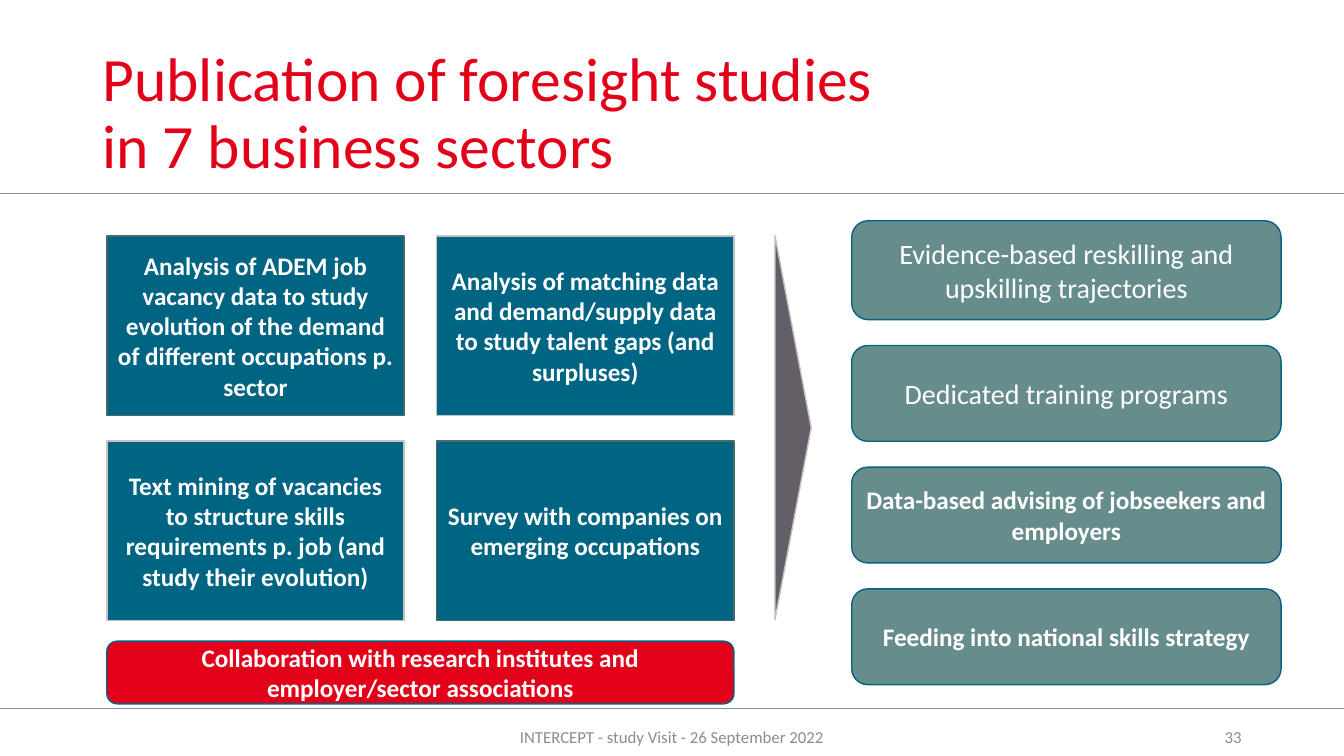
from dataclasses import dataclass

from lxml import etree
from pptx import Presentation
from pptx import util as u
from pptx.dml.color import RGBColor
from pptx.enum import shapes, text
from pptx.oxml import ns

RED = RGBColor(0xE3, 0x00, 0x19)
BLUE = RGBColor(0x00, 0x64, 0x83)
TEAL = RGBColor(0x66, 0x8D, 0x8C)
DARK_TEAL = RGBColor(0x4B, 0x68, 0x68)
PLUM = RGBColor(0x64, 0x5E, 0x66)
PALE = RGBColor(0xC5, 0xC1, 0xC6)
RULE_GREY = RGBColor(0x87, 0x91, 0x9A)
FOOTER_GREY = RGBColor(0x8C, 0x8C, 0x8C)
WHITE = RGBColor(0xFF, 0xFF, 0xFF)

WIDTH, HEIGHT = 960, 540
RECTANGLE = shapes.MSO_SHAPE.RECTANGLE
ROUNDED = shapes.MSO_SHAPE.ROUNDED_RECTANGLE
LEFT, CENTER, RIGHT = text.PP_ALIGN.LEFT, text.PP_ALIGN.CENTER, text.PP_ALIGN.RIGHT
MIDDLE, BOTTOM = text.MSO_ANCHOR.MIDDLE, text.MSO_ANCHOR.BOTTOM


@dataclass(frozen=True)
class Area:
    left: float
    top: float
    width: float
    height: float

    def lengths(self) -> list[u.Length]:
        return [u.Pt(value) for value in (self.left, self.top, self.width, self.height)]


@dataclass(frozen=True)
class Label:
    wording: str
    size: float = 18
    bold: bool = True
    color: RGBColor = WHITE
    align: text.PP_ALIGN = CENTER
    anchor: text.MSO_ANCHOR = MIDDLE
    spacing: float = 1.0


@dataclass(frozen=True)
class Method:
    column: int
    row: int
    outline: RGBColor
    wording: str


def write(shape, label: Label) -> None:
    frame = shape.text_frame
    frame.word_wrap = True
    frame.vertical_anchor = label.anchor
    paragraph = frame.paragraphs[0]
    paragraph.text = label.wording
    paragraph.alignment = label.align
    paragraph.line_spacing = label.spacing
    font_values = {"name": "Calibri", "size": u.Pt(label.size), "bold": label.bold}
    for run in paragraph.runs:
        for name, value in font_values.items():
            setattr(run.font, name, value)
        run.font.color.rgb = label.color


def add_text(slide, area: Area, label: Label) -> None:
    write(slide.shapes.add_textbox(*area.lengths()), label)


def add_block(slide, kind, area: Area, fill: RGBColor, outline: RGBColor,
              label: Label | None = None, rotation: float = 0) -> None:
    shape = slide.shapes.add_shape(kind, *area.lengths())
    shape.shadow.inherit = False
    shape.rotation = rotation
    shape.fill.solid()
    shape.fill.fore_color.rgb = fill
    shape.line.color.rgb = outline
    shape.line.width = u.Pt(1)
    if label:
        write(shape, label)


def add_rule(slide, top: float) -> None:
    rule = slide.shapes.add_connector(
        shapes.MSO_CONNECTOR.STRAIGHT, 0, u.Pt(top), u.Pt(WIDTH), u.Pt(top))
    rule.line.color.rgb = RULE_GREY
    rule.line.width = u.Pt(0.5)
    etree.SubElement(rule._element.spPr, ns.qn("a:effectLst"))


METHODS = [
    Method(0, 0, DARK_TEAL, "Analysis of ADEM job vacancy data to study evolution "
                            "of the demand of different occupations p. sector"),
    Method(0, 1, PALE, "Text mining of vacancies to structure skills requirements "
                       "p. job (and study their evolution)"),
    Method(1, 0, PALE, "Analysis of matching data and demand/supply data to study "
                       "talent gaps (and surpluses)"),
    Method(1, 1, DARK_TEAL, "Survey with companies on emerging occupations"),
]
METHOD_AREA = Area(76.3, 168.5, 212.4, 128.2)
COLUMN_PITCH, ROW_PITCH = 235.6, 146.4

OUTCOMES = [
    (70.6, Label("Evidence-based reskilling and upskilling trajectories", 20, False)),
    (68.4, Label("Dedicated training programs", 20, False)),
    (68.4, Label("Data-based advising of jobseekers and employers")),
    (68.4, Label("Feeding into national skills strategy")),
]
OUTCOME_GAP = 18.5


def main() -> None:
    presentation = Presentation()
    presentation.slide_width, presentation.slide_height = u.Pt(WIDTH), u.Pt(HEIGHT)
    slide = presentation.slides.add_slide(presentation.slide_layouts[6])

    # Title and rules
    for top in (137.8, 506.2):
        add_rule(slide, top)
    add_text(slide, Area(66.2, 28.8, 775.4, 104.4),
             Label("Publication of foresight studies \vin 7 business sectors",
                   44, False, RED, LEFT, BOTTOM, 0.9))

    # Footer
    add_text(slide, Area(318, 511.9, 324, 28.8),
             Label("INTERCEPT - study Visit - 26 September 2022", 12, False, FOOTER_GREY))
    add_text(slide, Area(678, 511.9, 216, 28.8),
             Label("33", 12, False, FOOTER_GREY, RIGHT))

    # Grid of methods
    for method in METHODS:
        area = Area(METHOD_AREA.left + method.column * COLUMN_PITCH,
                    METHOD_AREA.top + method.row * ROW_PITCH,
                    METHOD_AREA.width, METHOD_AREA.height)
        add_block(slide, RECTANGLE, area, BLUE, method.outline, Label(method.wording))

    # Pointer towards the outcomes
    add_block(slide, shapes.MSO_SHAPE.ISOSCELES_TRIANGLE,
              Area(429.3, 292.6, 274.4, 25.9), PLUM, PALE, rotation=90)

    # Collaboration banner
    add_block(slide, ROUNDED, Area(76.3, 458, 448, 44.8), RED, BLUE,
              Label("Collaboration with research institutes and "
                    "employer/sector associations"))

    # Stack of outcomes
    top = 157.7
    for height, label in OUTCOMES:
        add_block(slide, ROUNDED, Area(608.4, top, 306.7, height), TEAL, BLUE, label)
        top += height + OUTCOME_GAP

    presentation.save("out.pptx")


if __name__ == "__main__":
    main()
